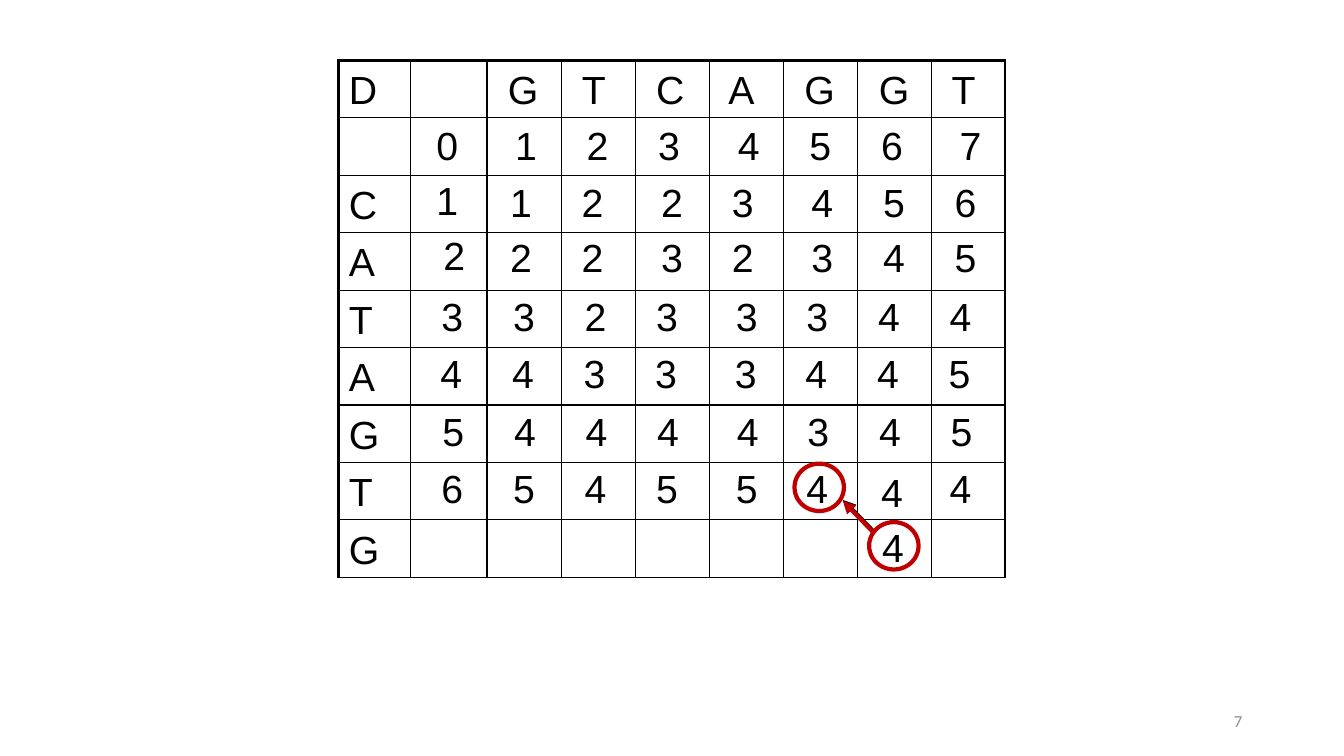
import pptx
import pptx.dml.color
import pptx.enum.shapes
import pptx.enum.text
import pptx.oxml.ns
import pptx.util
from lxml import etree

THEME = {
    "ink": "000000", "mark": "C00000", "muted": "8C8C8C",
    "font": "Arial", "foot": "Calibri",
    "size": 28, "small": 12, "thin": 1, "edge": 2.25, "bold": 3,
}

ACROSS = ["D", "", " G", " T", " C", " A", " G", " G", " T"]
DOWN = ["D", "", "C", "A", "T", "A", "G", "T", "G"]
COLS = [71, 76, 74, 73, 74, 73, 74, 73, 73]
GRID = {"left": 336, "top": 60, "row": 57}

# Left edges and widths of the score boxes
FIRST = ([423, 501, 572, 643, 722, 793, 864, 942], [39] * 8)
EARLY = ([430, 496, 567, 646, 716, 795, 866, 937],
         [42, 42, 42, 42, 42, 49, 49, 47])
LATE = ([428, 499, 570, 641, 720, 790, 861, 932],
        [39, 39, 42, 42, 49, 49, 49, 49])

# Scores, top, layout, sideways shift
SCORES = [
    ("01234567", 115, FIRST, 0),
    ("11223456", 172, EARLY, 0),
    ("22232345", 227, EARLY, 0),
    ("33233344", 285, LATE, 0),
    ("44333445", 342, LATE, -1),
    ("54444345", 399, LATE, 1),
    ("65455444", 456, LATE, 0),
]
NUDGE = {(1, 0): (-7, -2), (2, 0): (0, -2), (6, 6): (3, 4)}
NEXT = ("4", 865, 514, 49)
RINGS = [(862, 518), (788, 460)]
RING = (49, 47)
ARROWS = [("ink", 866, 527, 836, 496), ("mark", 866, 528, 836, 497)]
PAGE = ("7", 942, 695, 300, 40)


def px(n):
    return pptx.util.Emu(n * 9144)


def color(name):
    return pptx.dml.color.RGBColor.from_string(THEME[name])


def write(frame, text, font="font", size="size", ink="ink"):
    run = frame.paragraphs[0].add_run()
    run.text = text
    run.font.name = THEME[font]
    run.font.size = pptx.util.Pt(THEME[size])
    run.font.color.rgb = color(ink)


def box(slide, text, x, y, w, h=57, **look):
    frame = slide.shapes.add_textbox(px(x), px(y), px(w), px(h)).text_frame
    frame.word_wrap = True
    write(frame, text, **look)
    return frame


def child(node, tag, **attrs):
    return etree.SubElement(node, pptx.oxml.ns.qn(tag), attrs)


def border(cell, widths):
    """Draw the left, right, top and bottom lines ahead of the cell's fill."""
    props = cell._tc.get_or_add_tcPr()
    for spot, (side, width) in enumerate(zip("LRTB", widths)):
        line = child(props, f"a:ln{side}", w=str(pptx.util.Pt(width)))
        child(child(line, "a:solidFill"), "a:srgbClr", val=THEME["ink"])
        props.insert(spot, line)


def draw_grid(slide):
    count = len(DOWN)
    table = slide.shapes.add_table(
        count, len(COLS), px(GRID["left"]), px(GRID["top"]),
        px(sum(COLS)), px(count * GRID["row"])).table
    table.first_row = table.horz_banding = False
    for col, width in zip(table.columns, COLS):
        col.width = px(width)
    thin, edge = THEME["thin"], THEME["edge"]
    for r, head in enumerate(DOWN):
        table.rows[r].height = px(GRID["row"])
        for c, top in enumerate(ACROSS):
            cell = table.cell(r, c)
            cell.fill.background()
            cell.vertical_anchor = pptx.enum.text.MSO_ANCHOR.BOTTOM
            border(cell, [edge if c == 0 else thin,
                          edge if c == len(COLS) - 1 else thin,
                          edge if r == 0 else thin, thin])
            text = top if r == 0 else head if c == 0 else ""
            if text:
                write(cell.text_frame, text)


def draw_arrow(slide, ink, x1, y1, x2, y2):
    arrow = slide.shapes.add_connector(
        pptx.enum.shapes.MSO_CONNECTOR.STRAIGHT,
        px(x1), px(y1), px(x2), px(y2))
    arrow.line.color.rgb = color(ink)
    arrow.line.width = pptx.util.Pt(THEME["bold"])
    child(arrow.line._get_or_add_ln(), "a:tailEnd", type="triangle")
    child(arrow._element.spPr, "a:effectLst")


def draw_ring(slide, x, y):
    ring = slide.shapes.add_shape(
        pptx.enum.shapes.MSO_SHAPE.OVAL, px(x), px(y), *map(px, RING))
    ring.shadow.inherit = False
    ring.fill.background()
    ring.line.color.rgb = color("mark")
    ring.line.width = pptx.util.Pt(THEME["bold"])


def draw_scores(slide):
    for r, (row, top, (lefts, widths), shift) in enumerate(SCORES):
        for c, (score, left, width) in enumerate(zip(row, lefts, widths)):
            dx, dy = NUDGE.get((r, c), (0, 0))
            box(slide, score, left + shift + dx, top + dy, width)


def main():
    deck = pptx.Presentation()
    deck.slide_width, deck.slide_height = px(1333), px(750)
    slide = deck.slides.add_slide(deck.slide_layouts[6])
    box(slide, *NEXT)
    draw_grid(slide)
    for arrow in ARROWS:
        draw_arrow(slide, *arrow)
    for ring in RINGS:
        draw_ring(slide, *ring)
    page = box(slide, *PAGE, font="foot", size="small", ink="muted")
    page.vertical_anchor = pptx.enum.text.MSO_ANCHOR.MIDDLE
    page.paragraphs[0].alignment = pptx.enum.text.PP_ALIGN.RIGHT
    draw_scores(slide)
    deck.save("out.pptx")


if __name__ == "__main__":
    main()
